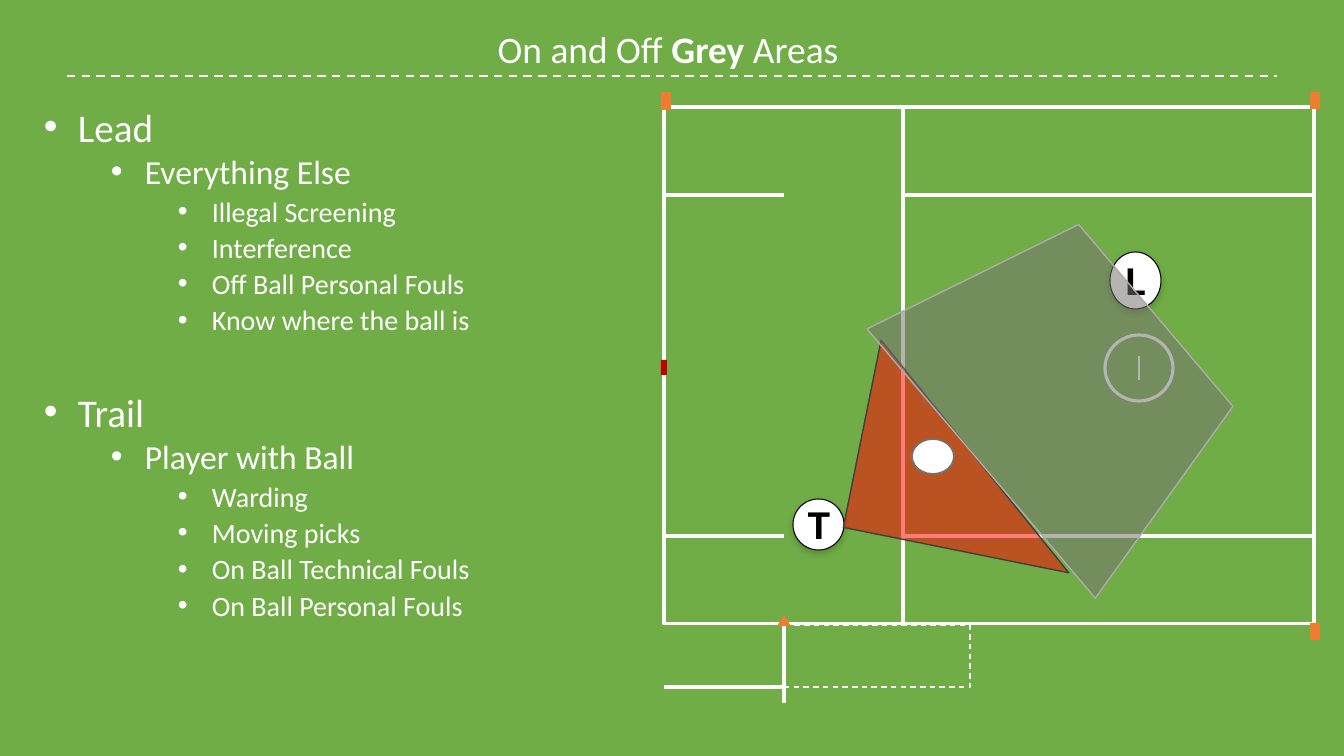
from lxml.etree import SubElement
from pptx import Presentation
from pptx.dml.color import RGBColor
from pptx.enum.dml import MSO_LINE
from pptx.enum.shapes import MSO_CONNECTOR, MSO_SHAPE
from pptx.enum.text import MSO_ANCHOR, PP_ALIGN
from pptx.oxml.ns import qn
from pptx.util import Pt

UNIT = 914400 / 100.8
WHITE, ORANGE, GREEN = "FFFFFF", "ED7D31", "70AD47"

TITLE = [("On and Off ", False), ("Grey", True), (" Areas", False)]
ROLES = [
    ("Lead", "Everything Else",
     ["Illegal Screening", "Interference", "Off Ball Personal Fouls",
      "Know where the ball is"]),
    ("Trail", "Player with Ball",
     ["Warding", "Moving picks", "On Ball Technical Fouls",
      "On Ball Personal Fouls"]),
]
SIZES = [28, 24, 20]

LEFT, BOX, MID, RIGHT = 664, 784, 903, 1314
TOP, HIGH, LOW, BASE, GATE = 107, 195, 536, 624, 687
ZONES = [(LEFT, TOP, MID, BASE), (MID, TOP, RIGHT, HIGH),
         (MID, LOW, RIGHT, BASE), (MID, HIGH, RIGHT, LOW)]
MARKS = [(LEFT, y, BOX, y) for y in (HIGH, LOW, GATE)] + [(BOX, 703, BOX, 626)]
FLAGS = [(661, 92, 10, 18, ORANGE), (1310, 92, 10, 17, ORANGE),
         (1310, 623, 10, 17, ORANGE), (661, 360, 6, 15, "C00000")]
REFS = [("T", 793, 499, 51, 51), ("L", 1110, 252, 51, 57)]


def emu(px):
    return round(px * UNIT)


def rgb(code):
    return RGBColor.from_string(code)


def paint(shape, fill=None, line=None, width=1, alpha=None):
    shape.shadow.inherit = False
    if fill:
        shape.fill.solid()
        shape.fill.fore_color.rgb = rgb(fill)
        if alpha:
            tint = shape.fill._xPr.find(qn("a:solidFill"))[0]
            SubElement(tint, qn("a:alpha"), val=str(alpha * 1000))
    else:
        shape.fill.background()
    if line:
        shape.line.color.rgb = rgb(line)
        shape.line.width = Pt(width)
    else:
        shape.line.fill.background()
    return shape


def draw(kind, x, y, w, h, **look):
    shape = slide.shapes.add_shape(kind, *map(emu, (x, y, w, h)))
    return paint(shape, **look)


def rule(x1, y1, x2, y2, width=2.25):
    line = slide.shapes.add_connector(
        MSO_CONNECTOR.STRAIGHT, *map(emu, (x1, y1, x2, y2)))
    line.line.color.rgb = rgb(WHITE)
    line.line.width = Pt(width)
    SubElement(line._element.spPr, qn("a:effectLst"))
    return line


def style(run, size, color, face="Calibri", bold=False):
    font = run.font
    font.size, font.name, font.bold = Pt(size), face, bold
    font.color.rgb = rgb(color)


def shade(shape):
    glow = SubElement(shape._element.spPr.find(qn("a:effectLst")),
                      qn("a:outerShdw"), blurRad="63500", dist="25400",
                      dir="5400000", rotWithShape="0")
    tint = SubElement(glow, qn("a:srgbClr"), val="000000")
    SubElement(tint, qn("a:alpha"), val="20000")


deck = Presentation()
deck.slide_width, deck.slide_height = emu(1344), emu(756)
slide = deck.slides.add_slide(deck.slide_layouts[5])
slide.background.fill.solid()
slide.background.fill.fore_color.rgb = rgb(GREEN)

rule(67, 76, 1277, 76, 1.5).line.dash_style = MSO_LINE.DASH

for x1, y1, x2, y2 in ZONES:
    draw(MSO_SHAPE.RECTANGLE, x1, y1, x2 - x1, y2 - y1, line=WHITE, width=2.25)
sub = draw(MSO_SHAPE.RECTANGLE, BOX, 625, 186, 62, line=WHITE)
sub.line.dash_style = MSO_LINE.DASH
cone = slide.shapes.build_freeform(BOX, 615, scale=UNIT)
cone.add_line_segments([(BOX - 7, 626), (BOX + 7, 626)])
paint(cone.convert_to_shape(), fill=ORANGE)
draw(MSO_SHAPE.OVAL, 1105, 335, 68, 66, line=WHITE, width=2.25)
rule(1139, 380, 1139, 356, 1.5)
for mark in MARKS:
    rule(*mark)
for x, y, w, h, color in FLAGS:
    draw(MSO_SHAPE.RECTANGLE, x, y, w, h, fill=color)

body = slide.shapes.add_textbox(*map(emu, (34, 107, 594, 555))).text_frame
body.word_wrap = True
lines = [(text, level) for head, part, items in ROLES
         for text, level in [(head, 0), (part, 1)] + [(i, 2) for i in items]]
for n, (text, level) in enumerate(lines):
    para = body.add_paragraph() if n else body.paragraphs[0]
    para.text = text
    para.level = level
    para.line_spacing = 0.8
    if n:
        para.space_before = Pt(6.7 if level else 43.4)
    props = para._p.get_or_add_pPr()
    props.set("marL", str(emu(34 + 67 * level)))
    props.set("indent", str(emu(-34)))
    SubElement(props, qn("a:buFont"), typeface="Arial")
    SubElement(props, qn("a:buChar"), char="•")
    style(para.runs[0], SIZES[level], WHITE)

title = slide.shapes.title
title.left, title.top, title.width, title.height = map(emu, (175, 26, 986, 50))
title.text_frame.vertical_anchor = MSO_ANCHOR.MIDDLE
para = title.text_frame.paragraphs[0]
para.alignment = PP_ALIGN.CENTER
para.line_spacing = 0.9
for text, bold in TITLE:
    run = para.add_run()
    run.text = text
    style(run, 26.7, WHITE, bold=bold)

for text, x, y, w, h in REFS:
    ref = draw(MSO_SHAPE.OVAL, x, y, w, h, fill=WHITE, line="000000", width=0.75)
    shade(ref)
    frame = ref.text_frame
    frame.margin_left = frame.margin_right = emu(7)
    frame.margin_top = frame.margin_bottom = emu(7)
    frame.vertical_anchor = MSO_ANCHOR.MIDDLE
    frame.text = text
    frame.paragraphs[0].alignment = PP_ALIGN.CENTER
    style(frame.paragraphs[0].runs[0], 26.7, "000000", "Roboto", True)

near = draw(MSO_SHAPE.RIGHT_TRIANGLE, 860, 361, 230, 191,
            fill="FF0000", alpha=52, line="404040")
near.rotation = 11.4
draw(MSO_SHAPE.OVAL, 912, 439, 42, 35, fill=WHITE, line="767171", width=1.25)
far = draw(MSO_SHAPE.TRAPEZOID, 892, 275, 353, 229,
           fill="767171", alpha=53, line="AFABAB")
far.rotation = 49.7

deck.save("out.pptx")
